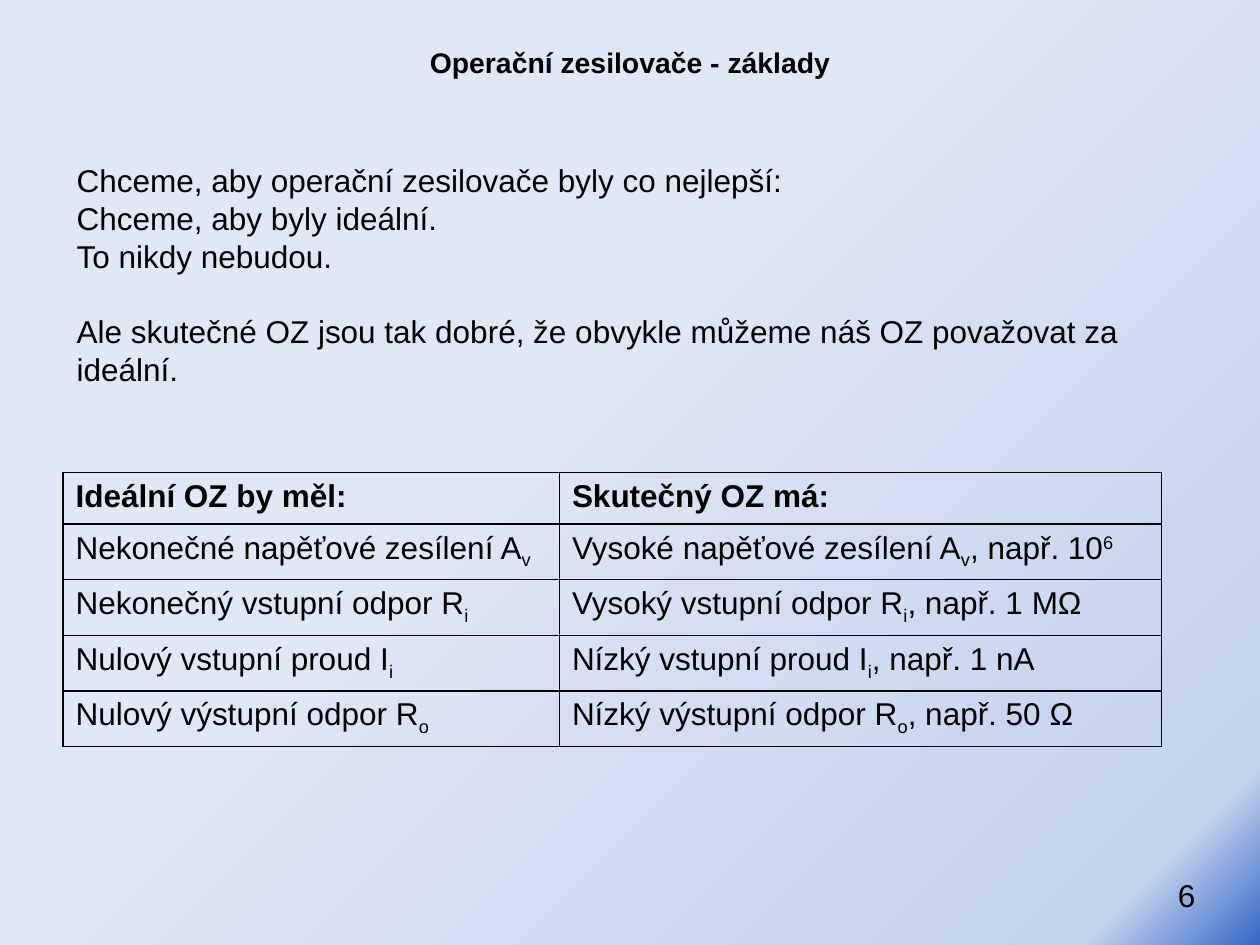
from lxml import etree
from pptx import Presentation
from pptx import util as u
from pptx.dml.color import RGBColor
from pptx.enum import text
from pptx.oxml import parse_xml
from pptx.oxml.ns import qn

COLORS = {"ink": "000000", "corner": "3468C5", "haze": "C2D1ED", "sky": "E1E8F5"}
FONT = "Arial"
BASELINES = {"_": "-25000", "^": "30000"}
STATEMENTS = [
    "Chceme, aby operační zesilovače byly co nejlepší:",
    "Chceme, aby byly ideální.",
    "To nikdy nebudou.",
]
CONCLUSION = "Ale skutečné OZ jsou tak dobré, že obvykle můžeme náš OZ považovat za ideální."
COMPARISON = [
    ("Ideální OZ by měl:", "Skutečný OZ má:"),
    ("Nekonečné napěťové zesílení A|_v", "Vysoké napěťové zesílení A|_v|, např. 10|^6"),
    ("Nekonečný vstupní odpor R|_i", "Vysoký vstupní odpor R|_i|, např. 1 MΩ"),
    ("Nulový vstupní proud I|_i", "Nízký vstupní proud I|_i|, např. 1 nA"),
    ("Nulový výstupní odpor R|_o", "Nízký výstupní odpor R|_o|, např. 50 Ω"),
]


def write(paragraph, content, size=18, bold=False, align=text.PP_ALIGN.LEFT, before=0):
    paragraph.alignment = align
    if before:
        paragraph.space_before = u.Pt(before)
    for part in content.split("|"):
        run = paragraph.add_run()
        run.text = part.lstrip("_^")
        run.font.name = FONT
        run.font.size = u.Pt(size)
        run.font.bold = bold
        run.font.color.rgb = RGBColor.from_string(COLORS["ink"])
        if part[0] in BASELINES:
            run.font._element.set("baseline", BASELINES[part[0]])


def add_box(slide, left, top, width, height, wrap=True):
    box = slide.shapes.add_textbox(*map(u.Inches, (left, top, width, height)))
    box.text_frame.word_wrap = wrap
    return box.text_frame


def paint_background(slide):
    slide.background.fill.solid()
    stops = "".join(
        f'<a:gs pos="{percent * 1000}"><a:srgbClr val="{COLORS[name]}"/></a:gs>'
        for percent, name in ((0, "corner"), (8, "haze"), (60, "sky"))
    )
    gradient = parse_xml(
        '<a:gradFill xmlns:a="http://schemas.openxmlformats.org/drawingml/2006/main" '
        f'rotWithShape="1"><a:gsLst>{stops}</a:gsLst><a:path path="circle">'
        '<a:fillToRect l="100000" t="100000"/></a:path></a:gradFill>'
    )
    solid = slide._element.find(".//" + qn("a:solidFill"))
    solid.getparent().replace(solid, gradient)


def outline(cell):
    properties = cell._tc.get_or_add_tcPr()
    for side in ("lnL", "lnR", "lnT", "lnB"):
        border = etree.SubElement(properties, qn("a:" + side), w=str(u.Pt(1)))
        fill = etree.SubElement(border, qn("a:solidFill"))
        etree.SubElement(fill, qn("a:srgbClr"), val=COLORS["ink"])
    cell.fill.background()


def add_comparison(slide):
    widths = (3.94, 4.78)
    row_height = 0.41
    table = slide.shapes.add_table(
        len(COMPARISON), len(widths), u.Inches(0.5), u.Inches(3.75),
        u.Inches(sum(widths)), u.Inches(row_height * len(COMPARISON)),
    ).table
    table.first_row = table.horz_banding = False
    for column, width in zip(table.columns, widths):
        column.width = u.Inches(width)
    for r, properties in enumerate(COMPARISON):
        table.rows[r].height = u.Inches(row_height)
        for c, content in enumerate(properties):
            cell = table.cell(r, c)
            outline(cell)
            write(cell.text_frame.paragraphs[0], content, bold=r == 0)


def add_introduction(slide):
    frame = add_box(slide, 0.51, 1.23, 8.9, 2.22)
    write(frame.paragraphs[0], STATEMENTS[0])
    for statement in STATEMENTS[1:]:
        write(frame.add_paragraph(), statement)
    write(frame.add_paragraph(), CONCLUSION, before=21.5)


def add_title(slide):
    frame = add_box(slide, 0.5, 0.3, 9, 0.38)
    frame.vertical_anchor = text.MSO_ANCHOR.MIDDLE
    write(frame.paragraphs[0], "Operační zesilovače - základy",
          size=16.2, bold=True, align=text.PP_ALIGN.CENTER)


def main():
    deck = Presentation()
    deck.slide_width, deck.slide_height = u.Inches(10), u.Inches(7.5)
    slide = deck.slides.add_slide(deck.slide_layouts[6])
    paint_background(slide)
    page_number = add_box(slide, 9.25, 6.9, 0.51, 0.4, wrap=False)
    write(page_number.paragraphs[0], "6")
    add_comparison(slide)
    add_introduction(slide)
    add_title(slide)
    deck.save("out.pptx")


if __name__ == "__main__":
    main()
